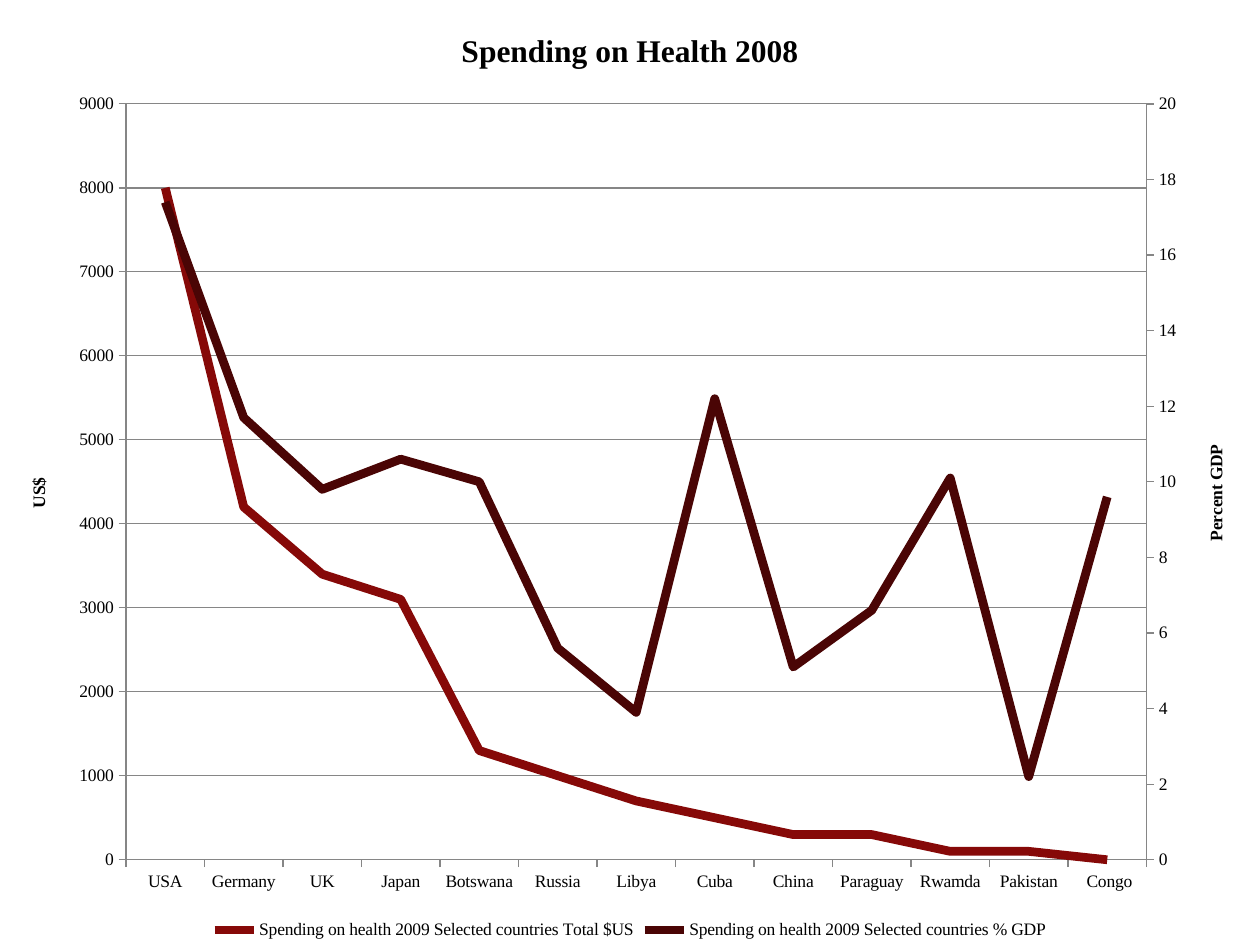
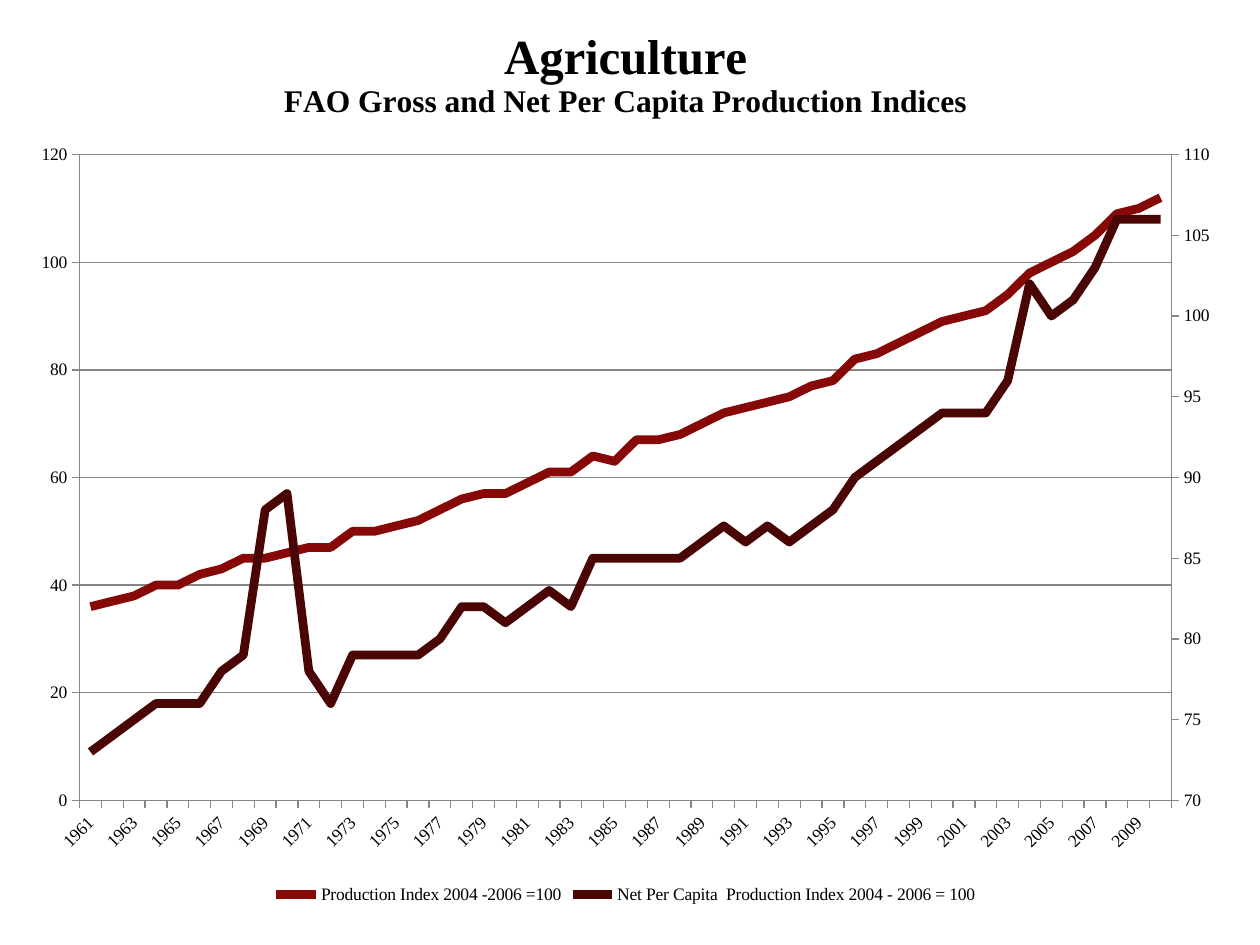
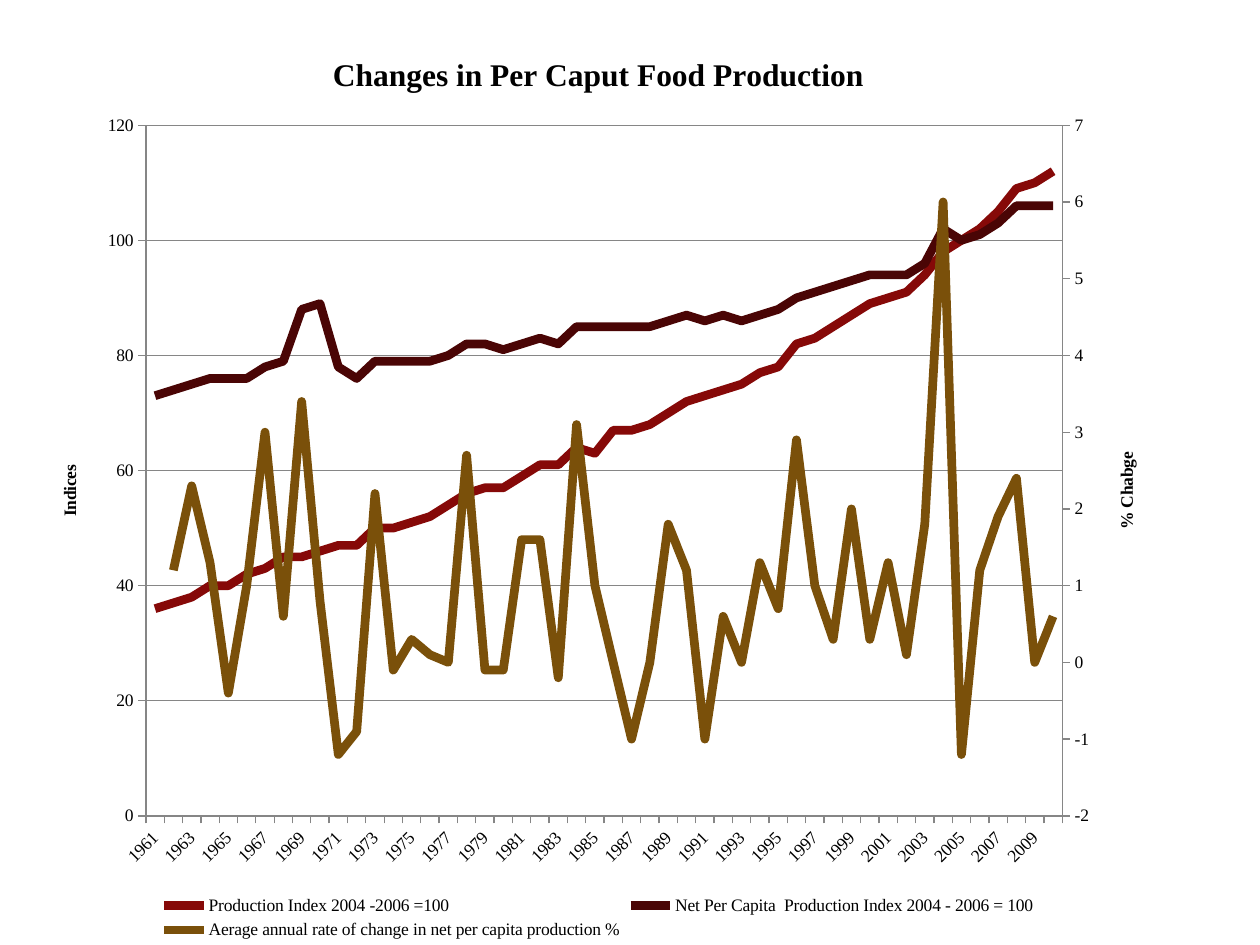
from copy import deepcopy

from lxml import etree
from pptx import Presentation
from pptx import util as u
from pptx.chart import axis as ax
from pptx.chart import data as cd
from pptx.dml.color import RGBColor
from pptx.enum import chart as ch
from pptx.oxml import ns

RED = RGBColor(0x86, 0x09, 0x08)
MAROON = RGBColor(0x4A, 0x05, 0x05)
BROWN = RGBColor(0x7A, 0x50, 0x0A)
GRAY = RGBColor(0x86, 0x86, 0x86)
BLACK = RGBColor(0, 0, 0)
FONT = "Times New Roman"

COUNTRIES = ["USA", "Germany", "UK", "Japan", "Botswana", "Russia", "Libya",
             "Cuba", "China", "Paraguay", "Rwamda", "Pakistan", " Congo"]
YEARS = list(range(1961, 2011))
SPENDING = ("Spending on health 2009 Selected countries Total $US",
            [8000, 4200, 3400, 3100, 1300, 1000, 700, 500, 300, 300, 100, 100, 0], RED)
GDP_SHARE = ("Spending on health 2009 Selected countries % GDP",
             [17.4, 11.7, 9.8, 10.6, 10, 5.6, 3.9, 12.2, 5.1, 6.6, 10.1, 2.2, 9.6], MAROON)
GROSS = ("Production Index 2004 -2006 =100",
         [36, 37, 38, 40, 40, 42, 43, 45, 45, 46, 47, 47, 50, 50, 51, 52, 54,
          56, 57, 57, 59, 61, 61, 64, 63, 67, 67, 68, 70, 72, 73, 74, 75, 77,
          78, 82, 83, 85, 87, 89, 90, 91, 94, 98, 100, 102, 105, 109, 110, 112], RED)
NET = ("Net Per Capita  Production Index 2004 - 2006 = 100",
       [73, 74, 75, 76, 76, 76, 78, 79, 88, 89, 78, 76, 79, 79, 79, 79, 80, 82,
        82, 81, 82, 83, 82, 85, 85, 85, 85, 85, 86, 87, 86, 87, 86, 87, 88, 90,
        91, 92, 93, 94, 94, 94, 96, 102, 100, 101, 103, 106, 106, 106], MAROON)
CHANGE = ("Aerage annual rate of change in net per capita production %",
          [None, 1.2, 2.3, 1.3, -0.4, 1, 3, 0.6, 3.4, 0.8, -1.2, -0.9, 2.2,
           -0.1, 0.3, 0.1, 0, 2.7, -0.1, -0.1, 1.6, 1.6, -0.2, 3.1, 1, 0, -1, 0,
           1.8, 1.2, -1, 0.6, 0, 1.3, 0.7, 2.9, 1, 0.3, 2, 0.3, 1.3, 0.1, 1.8,
           6, -1.2, 1.2, 1.9, 2.4, 0, 0.6], BROWN)


class Deck:
    """Holds the chart style and the current slide."""

    def __init__(self):
        self.prs = Presentation()
        self.prs.slide_width, self.prs.slide_height = u.Inches(10), u.Inches(7.5)
        self.slide = None

    def add_slide(self):
        self.slide = self.prs.slides.add_slide(self.prs.slide_layouts[6])

    def style_font(self, font, size, bold=False):
        font.name, font.size, font.bold = FONT, u.Pt(size), bold
        font.color.rgb = BLACK

    def style_line(self, line, color=GRAY, width=0.75):
        line.color.rgb, line.width = color, u.Pt(width)

    def add_lines(self, tf, lines):
        for i, (words, size) in enumerate(lines):
            p = tf.paragraphs[0] if i == 0 else tf.add_paragraph()
            r = p.add_run()
            r.text = words
            self.style_font(r.font, size, True)

    def set_val(self, element, tag, value):
        element.find(ns.qn(tag)).set("val", str(value))

    def style_axis(self, axis):
        axis.major_tick_mark = ch.XL_TICK_MARK.OUTSIDE
        axis.minor_tick_mark = ch.XL_TICK_MARK.NONE
        self.style_line(axis.format.line)
        self.style_font(axis.tick_labels.font, 10)

    def scale(self, axis, low, high, step, title):
        axis.minimum_scale, axis.maximum_scale, axis.major_unit = low, high, step
        if title:
            tf = axis.axis_title.text_frame
            self.add_lines(tf, [(title, 10)])
            body = tf._txBody.find(ns.qn("a:bodyPr"))
            body.set("rot", "-5400000")
            body.set("vert", "horz")

    def slant_years(self, axis):
        element = axis._element
        body = element.find(ns.qn("c:txPr")).find(ns.qn("a:bodyPr"))
        body.set("rot", "-2700000")
        body.set("vert", "horz")
        skip = etree.Element(ns.qn("c:tickLblSkip"), val="2")
        element.find(ns.qn("c:lblOffset")).addnext(skip)

    def place_plot(self, plot_area, box):
        for old in plot_area.findall(ns.qn("c:layout")):
            plot_area.remove(old)
        layout = etree.Element(ns.qn("c:layout"))
        manual = etree.SubElement(layout, ns.qn("c:manualLayout"))
        parts = [("layoutTarget", "inner"), ("xMode", "edge"), ("yMode", "edge")]
        for tag, value in parts + list(zip("xywh", box)):
            etree.SubElement(manual, ns.qn("c:" + tag), val=str(value))
        plot_area.insert(0, layout)

    def move_last_to_right(self, chart):
        left_cat, left_val = chart.category_axis._element, chart.value_axis._element
        left_plot = left_cat.getparent().find(ns.qn("c:lineChart"))
        right_plot, cat, val = (deepcopy(e) for e in (left_plot, left_cat, left_val))
        left_plot.remove(left_plot.findall(ns.qn("c:ser"))[-1])
        for ser in right_plot.findall(ns.qn("c:ser"))[:-1]:
            right_plot.remove(ser)
        for ref, number in zip(right_plot.findall(ns.qn("c:axId")), (501, 502)):
            ref.set("val", str(number))
        for element, own, other in ((cat, 501, 502), (val, 502, 501)):
            self.set_val(element, "c:axId", own)
            self.set_val(element, "c:crossAx", other)
        self.set_val(val, "c:axPos", "r")
        self.set_val(val, "c:crosses", "max")
        left_plot.addnext(right_plot)
        left_val.addnext(val)
        val.addnext(cat)
        ax.CategoryAxis(cat).visible = False
        right = ax.ValueAxis(val)
        right.has_major_gridlines = False
        return right

    def line_chart(self, place, plot, title, cats, series, left, right):
        data = cd.CategoryChartData()
        data.categories = cats
        for name, values, _ in series:
            data.add_series(name, values)
        box = [u.Inches(n) for n in place]
        chart = self.slide.shapes.add_chart(ch.XL_CHART_TYPE.LINE, *box, data).chart
        self.style_font(chart.font, 10)
        chart.has_title = True
        self.add_lines(chart.chart_title.text_frame, title)
        chart.has_legend = True
        chart.legend.position = ch.XL_LEGEND_POSITION.BOTTOM
        chart.legend.include_in_layout = False
        self.style_font(chart.legend.font, 10)
        chart.plots[0].vary_by_categories = False
        for s, (_, _, color) in zip(chart.plots[0].series, series):
            s.smooth = False
            s.marker.style = ch.XL_MARKER_STYLE.NONE
            self.style_line(s.format.line, color, 5)
        cat, val = chart.category_axis, chart.value_axis
        for axis in (cat, val):
            self.style_axis(axis)
        cat.tick_label_position = ch.XL_TICK_LABEL_POSITION.LOW
        val.tick_labels.number_format = "General"
        val.tick_labels.number_format_is_linked = False
        val.has_major_gridlines = True
        self.style_line(val.major_gridlines.format.line)
        right_axis = self.move_last_to_right(chart)
        self.scale(val, *left)
        self.scale(right_axis, *right)
        if cats is YEARS:
            self.slant_years(cat)
        self.place_plot(cat._element.getparent(), plot)


def main():
    deck = Deck()
    deck.add_slide()
    deck.line_chart((0, 0, 10, 7.5), (0.1, 0.11, 0.81, 0.8),
                    [("Spending on Health 2008", 18)], COUNTRIES,
                    [SPENDING, GDP_SHARE],
                    (0, 9000, 1000, "US$"), (0, 20, 2, "Percent GDP"))
    deck.add_slide()
    deck.line_chart((0.15, 0, 9.63, 7.22), (0.05, 0.17, 0.9, 0.71),
                    [("Agriculture", 28),
                     ("FAO Gross and Net Per Capita Production Indices", 18)],
                    YEARS, [GROSS, NET], (0, 120, 20, None), (70, 110, 5, None))
    deck.add_slide()
    deck.line_chart((0.26, 0.19, 8.98, 7.31), (0.1, 0.11, 0.81, 0.75),
                    [("Changes in Per Caput Food Production", 18)], YEARS,
                    [GROSS, NET, CHANGE],
                    (0, 120, 20, "Indices"), (-2, 7, 1, "% Chabge"))
    deck.prs.save("out.pptx")


if __name__ == "__main__":
    main()
